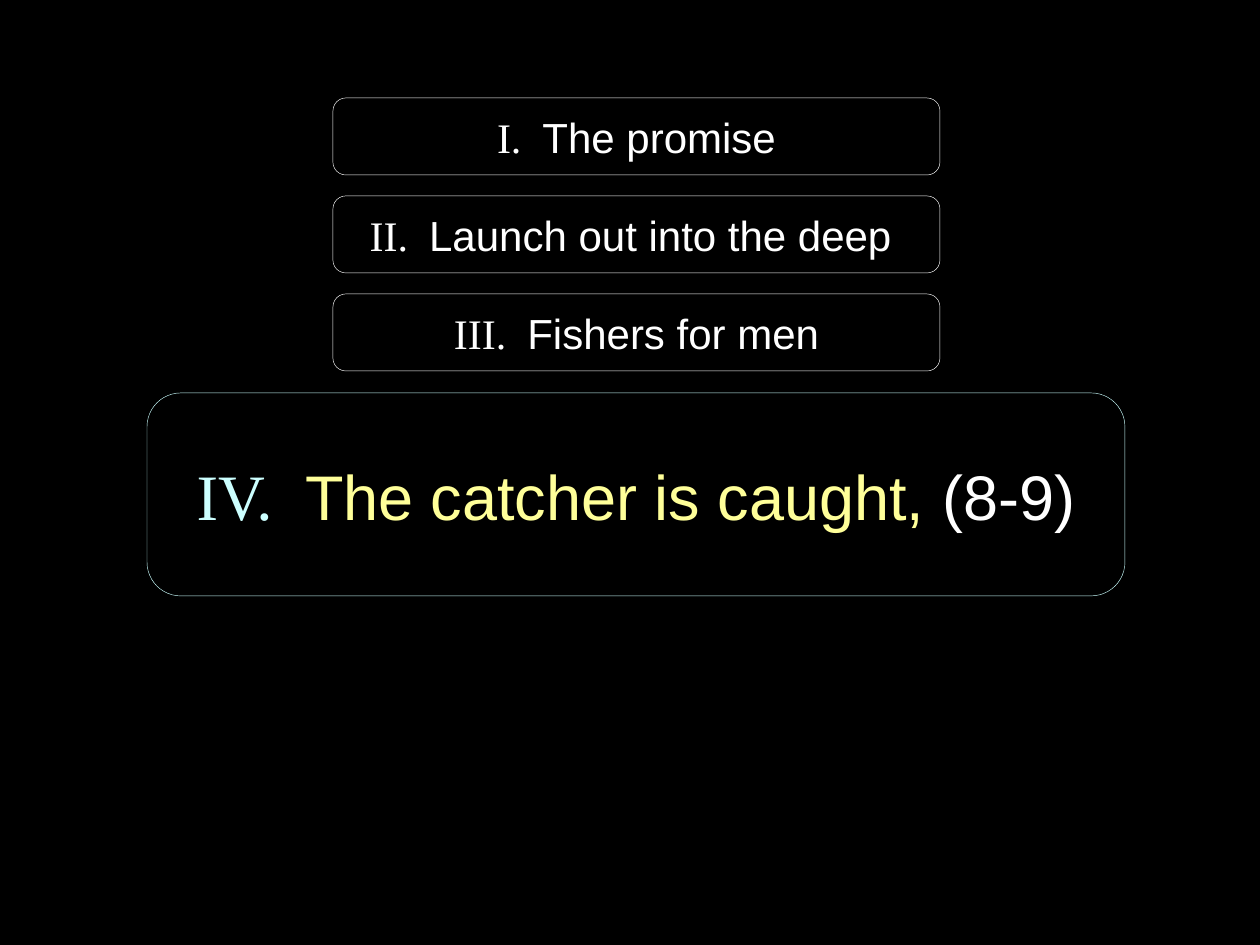
from dataclasses import dataclass

import pptx
import pptx.dml.color
import pptx.enum.shapes
import pptx.enum.text
import pptx.util

EMU_PER_PIXEL = 914400 / 126
BLACK, WHITE, CYAN, YELLOW = "000000", "FFFFFF", "CCFFFF", "FFFF99"
NUMERAL_FONT, TITLE_FONT = "Times New Roman", "Arial"


@dataclass
class TextRun:
    text: str
    font: str
    size: int
    color: str


@dataclass
class OutlinePoint:
    left: int
    top: int
    width: int
    height: int
    line_color: str
    runs: list[TextRun]


def px(length: int) -> pptx.util.Emu:
    return pptx.util.Emu(round(length * EMU_PER_PIXEL))


def rgb(color: str) -> pptx.dml.color.RGBColor:
    return pptx.dml.color.RGBColor.from_string(color)


def add_run(paragraph, text_run: TextRun) -> None:
    run = paragraph.add_run()
    run.text = text_run.text
    font_format = {"name": text_run.font, "size": pptx.util.Pt(text_run.size)}
    for attribute, value in font_format.items():
        setattr(run.font, attribute, value)
    run.font.color.rgb = rgb(text_run.color)


def add_outline_point(slide, point: OutlinePoint) -> None:
    shape = slide.shapes.add_shape(
        pptx.enum.shapes.MSO_SHAPE.ROUNDED_RECTANGLE,
        px(point.left), px(point.top), px(point.width), px(point.height),
    )
    shape.shadow.inherit = False
    shape.fill.solid()
    shape.fill.fore_color.rgb = rgb(BLACK)
    shape.line.color.rgb = rgb(point.line_color)
    shape.line.width = pptx.util.Pt(0.25)
    frame_format = {
        "word_wrap": True,
        "vertical_anchor": pptx.enum.text.MSO_ANCHOR.MIDDLE,
    }
    for attribute, value in frame_format.items():
        setattr(shape.text_frame, attribute, value)
    paragraph = shape.text_frame.paragraphs[0]
    paragraph.alignment = pptx.enum.text.PP_ALIGN.CENTER
    for text_run in point.runs:
        add_run(paragraph, text_run)


def main() -> None:
    """Build the sermon outline slide with its fourth point enlarged."""
    presentation = pptx.Presentation()
    presentation.slide_width = px(1260)
    presentation.slide_height = px(945)
    slide = presentation.slides.add_slide(presentation.slide_layouts[6])
    slide.background.fill.solid()
    slide.background.fill.fore_color.rgb = rgb(BLACK)

    earlier_points = [
        ("I.  ", "The promise"),
        ("II.  ", "Launch out into the deep "),
        ("III.  ", "Fishers for men"),
    ]
    for index, (numeral, title) in enumerate(earlier_points):
        runs = [
            TextRun(numeral, NUMERAL_FONT, 24, WHITE),
            TextRun(title, TITLE_FONT, 24, WHITE),
        ]
        add_outline_point(slide, OutlinePoint(333, 98 + 98 * index, 607, 77, WHITE, runs))

    current_runs = [
        TextRun("IV.  ", NUMERAL_FONT, 37, CYAN),
        TextRun("The catcher is caught, ", TITLE_FONT, 36, YELLOW),
        TextRun("(8-9)", TITLE_FONT, 36, WHITE),
    ]
    add_outline_point(slide, OutlinePoint(147, 393, 978, 203, CYAN, current_runs))
    presentation.save("out.pptx")


if __name__ == "__main__":
    main()
